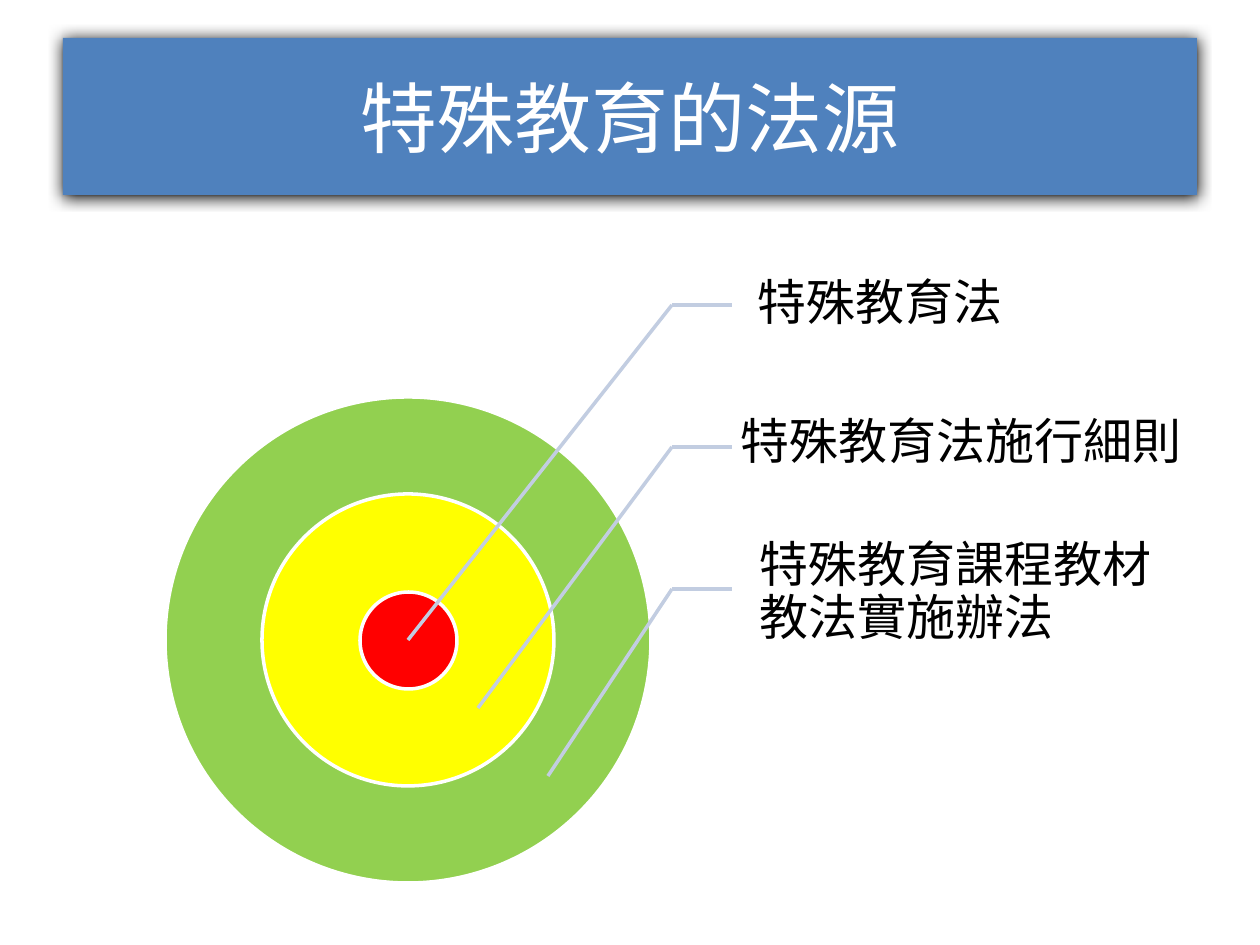
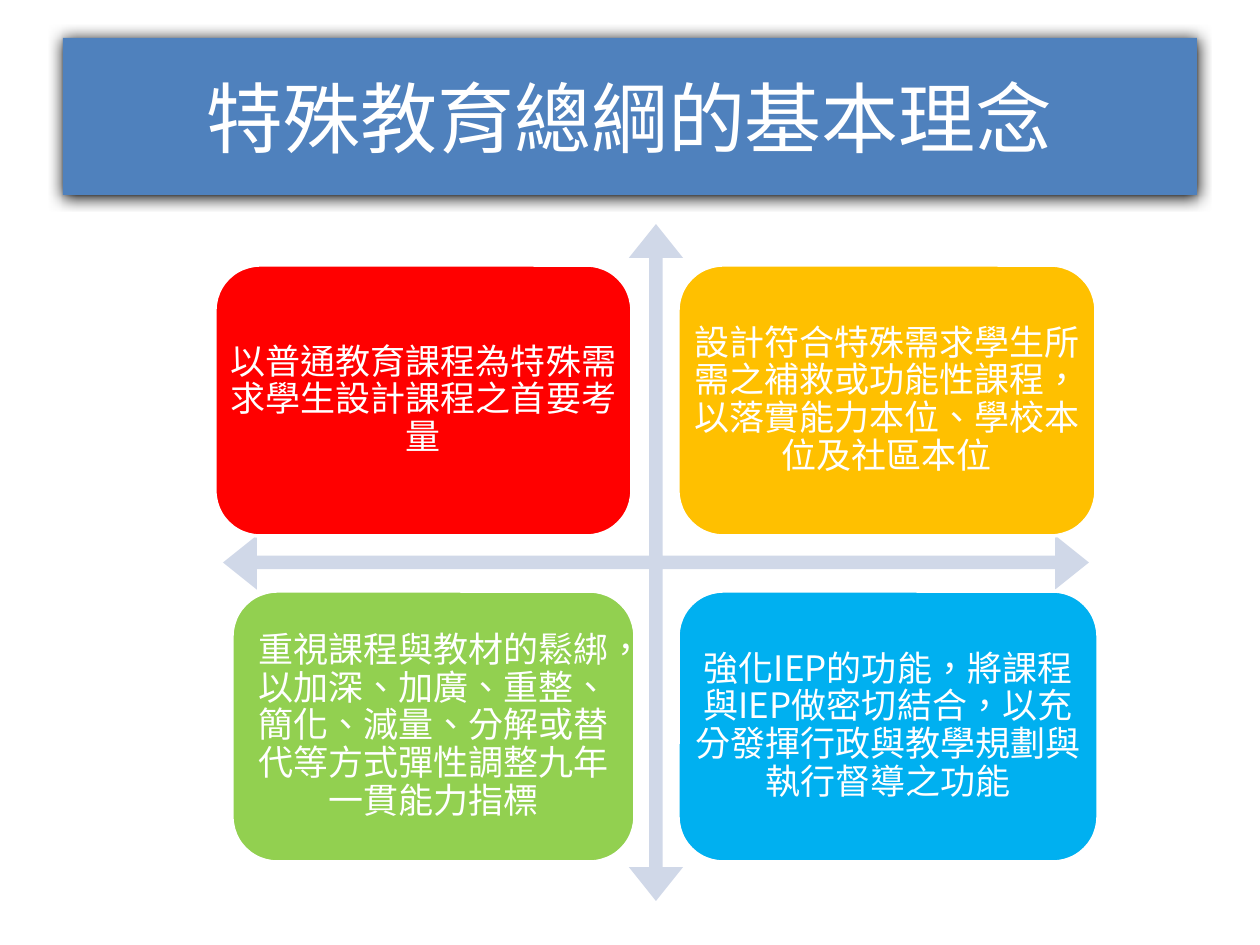
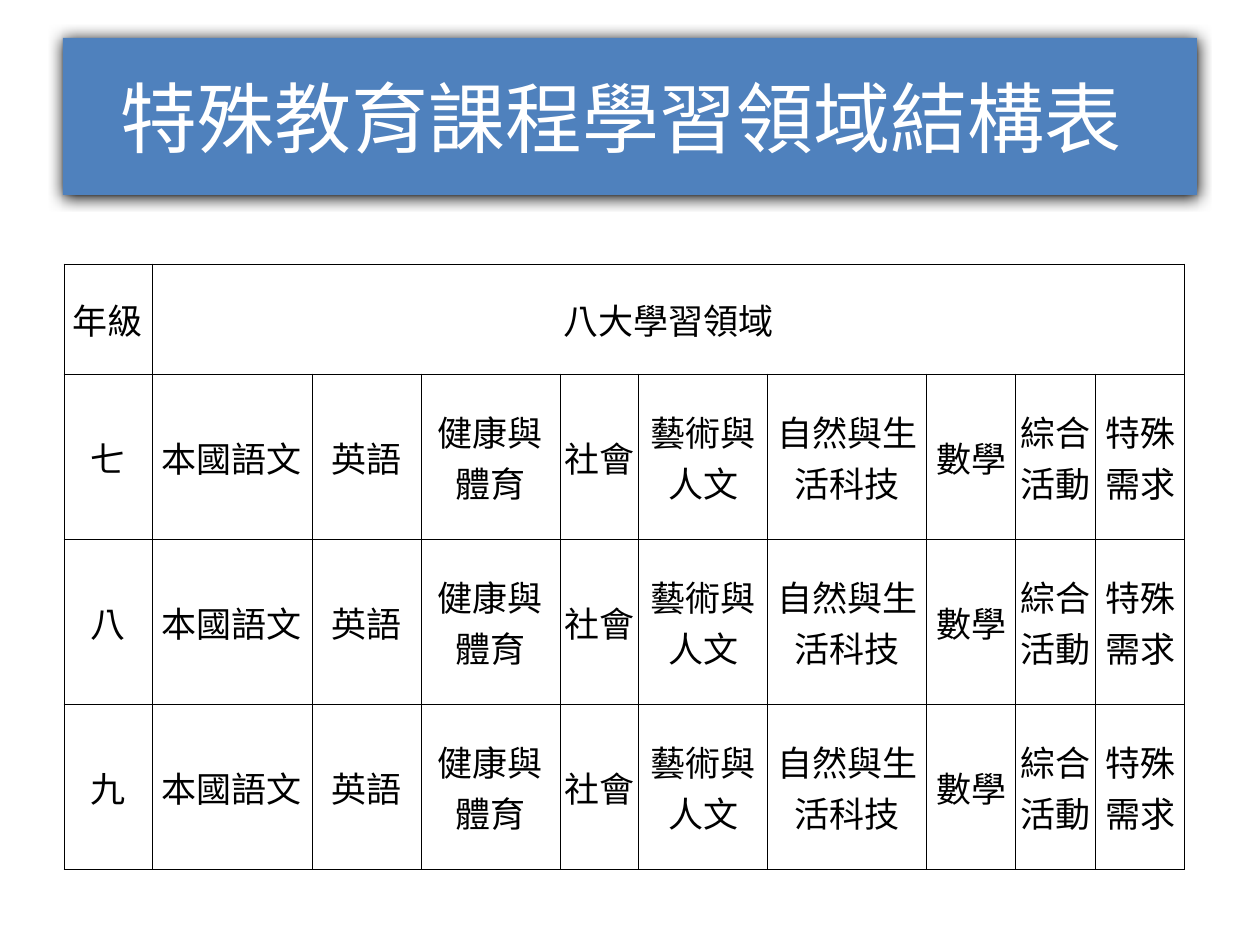
from dataclasses import dataclass

import pptx
import pptx.dml.color
import pptx.enum.shapes
import pptx.enum.text
import pptx.oxml
import pptx.oxml.ns
import pptx.util

EMU_PER_PX = 914400 / 126
SLIDE_WIDTH, SLIDE_HEIGHT = 1260, 945

COLORS = {
    "banner": "4F81BD",
    "white": "FFFFFF",
    "black": "000000",
    "red": "FF0000",
    "yellow": "FFFF00",
    "green": "92D050",
    "amber": "FFC000",
    "sky": "00B0F0",
    "leader": "C2CDE1",
    "axes": "D0D8E8",
}
TITLE_FONT = "Noto Sans CJK SC"
DIAGRAM_FONT = "Noto Sans CJK JP"
TABLE_FONT = "Noto Sans CJK TC"

PRESET = pptx.enum.shapes.MSO_SHAPE
ALIGN = pptx.enum.text.PP_ALIGN
MIDDLE = pptx.enum.text.MSO_ANCHOR.MIDDLE


@dataclass(frozen=True)
class Box:
    left: int
    top: int
    width: int
    height: int

    def emu(self) -> tuple:
        return tuple(px(n) for n in (self.left, self.top, self.width, self.height))


@dataclass(frozen=True)
class TextStyle:
    font: str
    size: int
    color: str
    align: object = ALIGN.CENTER
    spacing: float = 1.0


@dataclass(frozen=True)
class Ring:
    diameter: int
    color: str


@dataclass(frozen=True)
class Law:
    text: str
    box: Box


@dataclass(frozen=True)
class Principle:
    text: str
    box: Box
    color: str


TITLE_STYLE = TextStyle(TITLE_FONT, 44, "white")
LAW_STYLE = TextStyle(DIAGRAM_FONT, 28, "black", ALIGN.LEFT, 0.9)
PRINCIPLE_STYLE = TextStyle(DIAGRAM_FONT, 20, "white", spacing=0.9)
TABLE_STYLE = TextStyle(TABLE_FONT, 20, "black")

BANNER = Box(63, 38, 1134, 157)

RING_CENTER = (408, 640)
RINGS = [Ring(486, "green"), Ring(292, "yellow"), Ring(97, "red")]
LAWS = [
    Law("特殊教育法", Box(730, 234, 378, 142)),
    Law("特殊教育法施行細則", Box(713, 373, 483, 142)),
    Law("特殊教育課程教材教法實施辦法", Box(732, 522, 451, 142)),
]
LEADER_ELBOW, LEADER_END = 672, 732
LEADER_TOP, LEADER_STEP = 305, 142
TARGET_STEP = (70, 68)

AXES = Box(223, 224, 866, 677)
PRINCIPLES = [
    Principle("以普通教育課程為特殊需求學生設計課程之首要考量",
              Box(215, 265, 417, 271), "red"),
    Principle("設計符合特殊需求學生所需之補救或功能性課程，以落實能力本位、學校本位及社區本位",
              Box(678, 265, 418, 271), "amber"),
    Principle("重視課程與教材的鬆綁，以加深、加廣、重整、簡化、減量、分解或替代等方式彈性調整九年一貫能力指標",
              Box(232, 591, 403, 271), "green"),
    Principle("強化IEP的功能，將課程與IEP做密切結合，以充分發揮行政與教學規劃與執行督導之功能",
              Box(678, 591, 420, 271), "sky"),
]

GRADES = ["七", "八", "九"]
DOMAINS = ["本國語文", "英語", "健康與體育", "社會", "藝術與人文",
           "自然與生活科技", "數學", "綜合活動", "特殊需求"]
COLUMN_WIDTHS = [88, 160, 109, 139, 79, 129, 159, 89, 80, 89]
ROW_HEIGHTS = [110, 165, 165, 165]


def px(length: float) -> int:
    return round(length * EMU_PER_PX)


def rgb(color: str) -> pptx.dml.color.RGBColor:
    return pptx.dml.color.RGBColor.from_string(COLORS[color])


def xml(markup: str):
    head, rest = markup.split(" ", 1)
    return pptx.oxml.parse_xml(f"{head} {pptx.oxml.ns.nsdecls('a')} {rest}")


def set_text(frame, text: str, style: TextStyle) -> None:
    frame.word_wrap = True
    frame.text = text
    paragraph = frame.paragraphs[0]
    paragraph.alignment = style.align
    paragraph.line_spacing = style.spacing
    paragraph.font.name = style.font
    paragraph.font.size = pptx.util.Pt(style.size)
    paragraph.font.color.rgb = rgb(style.color)
    defaults = paragraph._p.pPr.find(pptx.oxml.ns.qn("a:defRPr"))
    defaults.set("lang", "zh-TW")
    defaults.append(xml(f'<a:ea typeface="{style.font}"/>'))


def set_margins(target, left: int, top: int, right: int, bottom: int) -> None:
    target.margin_left, target.margin_top = px(left), px(top)
    target.margin_right, target.margin_bottom = px(right), px(bottom)


def add_filled(slide, preset, box: Box, color: str, outline: str = ""):
    shape = slide.shapes.add_shape(preset, *box.emu())
    shape.shadow.inherit = False
    shape.fill.solid()
    shape.fill.fore_color.rgb = rgb(color)
    if outline:
        shape.line.color.rgb = rgb(outline)
        shape.line.width = pptx.util.Pt(2)
    else:
        shape.line.fill.background()
    return shape


def add_leader(slide, start: tuple, end: tuple) -> None:
    leader = slide.shapes.add_connector(
        pptx.enum.shapes.MSO_CONNECTOR.STRAIGHT, *(px(n) for n in start + end))
    leader.line.color.rgb = rgb("leader")
    leader.line.width = pptx.util.Pt(2)
    leader._element.spPr.append(xml("<a:effectLst />"))


def add_titled_slide(deck, title: str):
    slide = deck.slides.add_slide(deck.slide_layouts[6])
    banner = add_filled(slide, PRESET.RECTANGLE, BANNER, "banner")
    effects = banner._element.spPr.find(pptx.oxml.ns.qn("a:effectLst"))
    effects.append(xml(
        '<a:outerShdw blurRad="107950" dist="12700" dir="5400000" rotWithShape="0">'
        f'<a:srgbClr val="{COLORS["black"]}"/></a:outerShdw>'))
    banner.text_frame.vertical_anchor = MIDDLE
    set_text(banner.text_frame, title, TITLE_STYLE)
    return slide


def build_sources(deck) -> None:
    slide = add_titled_slide(deck, "特殊教育的法源")
    center_x, center_y = RING_CENTER
    for ring in RINGS:
        box = Box(center_x - ring.diameter // 2, center_y - ring.diameter // 2,
                  ring.diameter, ring.diameter)
        add_filled(slide, PRESET.OVAL, box, ring.color, "white")
    for index, law in enumerate(LAWS):
        label = slide.shapes.add_textbox(*law.box.emu()).text_frame
        label.vertical_anchor = MIDDLE
        set_margins(label, 28, 5, 5, 5)
        set_text(label, law.text, LAW_STYLE)
        elbow = (LEADER_ELBOW, LEADER_TOP + index * LEADER_STEP)
        target = (center_x + index * TARGET_STEP[0], center_y + index * TARGET_STEP[1])
        add_leader(slide, elbow, (LEADER_END, elbow[1]))
        add_leader(slide, elbow, target)


def build_principles(deck) -> None:
    slide = add_titled_slide(deck, "特殊教育總綱的基本理念")
    axes = add_filled(slide, PRESET.QUAD_ARROW, AXES, "axes")
    for index, ratio in enumerate((0.02, 0.04, 0.05)):
        axes.adjustments[index] = ratio
    for principle in PRINCIPLES:
        card = add_filled(slide, PRESET.ROUNDED_RECTANGLE, principle.box,
                          principle.color, "white")
        card.text_frame.vertical_anchor = MIDDLE
        set_margins(card.text_frame, 0, 0, 0, 0)
        set_text(card.text_frame, principle.text, PRINCIPLE_STYLE)


def style_cell(cell) -> None:
    cell.fill.background()
    cell.vertical_anchor = MIDDLE
    set_margins(cell, 1, 1, 1, 0)
    for index, side in enumerate("LRTB"):
        cell._tc.get_or_add_tcPr().insert(index, xml(
            f'<a:ln{side} w="6350"><a:solidFill><a:srgbClr val="{COLORS["black"]}"/>'
            f"</a:solidFill></a:ln{side}>"))


def build_domains(deck) -> None:
    slide = add_titled_slide(deck, "特殊教育課程學習領域結構表 ")
    box = Box(64, 264, sum(COLUMN_WIDTHS), sum(ROW_HEIGHTS))
    table = slide.shapes.add_table(len(ROW_HEIGHTS), len(COLUMN_WIDTHS), *box.emu()).table
    table.first_row = table.horz_banding = False
    for column, width in zip(table.columns, COLUMN_WIDTHS):
        column.width = px(width)
    for row, height in zip(table.rows, ROW_HEIGHTS):
        row.height = px(height)
    for cell in table.iter_cells():
        style_cell(cell)
    table.cell(0, 1).merge(table.cell(0, len(DOMAINS)))
    rows = [["年級", "八大學習領域"]] + [[grade] + DOMAINS for grade in GRADES]
    for row_index, texts in enumerate(rows):
        for column_index, text in enumerate(texts):
            set_text(table.cell(row_index, column_index).text_frame, text, TABLE_STYLE)


def main() -> None:
    deck = pptx.Presentation()
    deck.slide_width, deck.slide_height = px(SLIDE_WIDTH), px(SLIDE_HEIGHT)
    build_sources(deck)
    build_principles(deck)
    build_domains(deck)
    deck.save("out.pptx")


if __name__ == "__main__":
    main()
